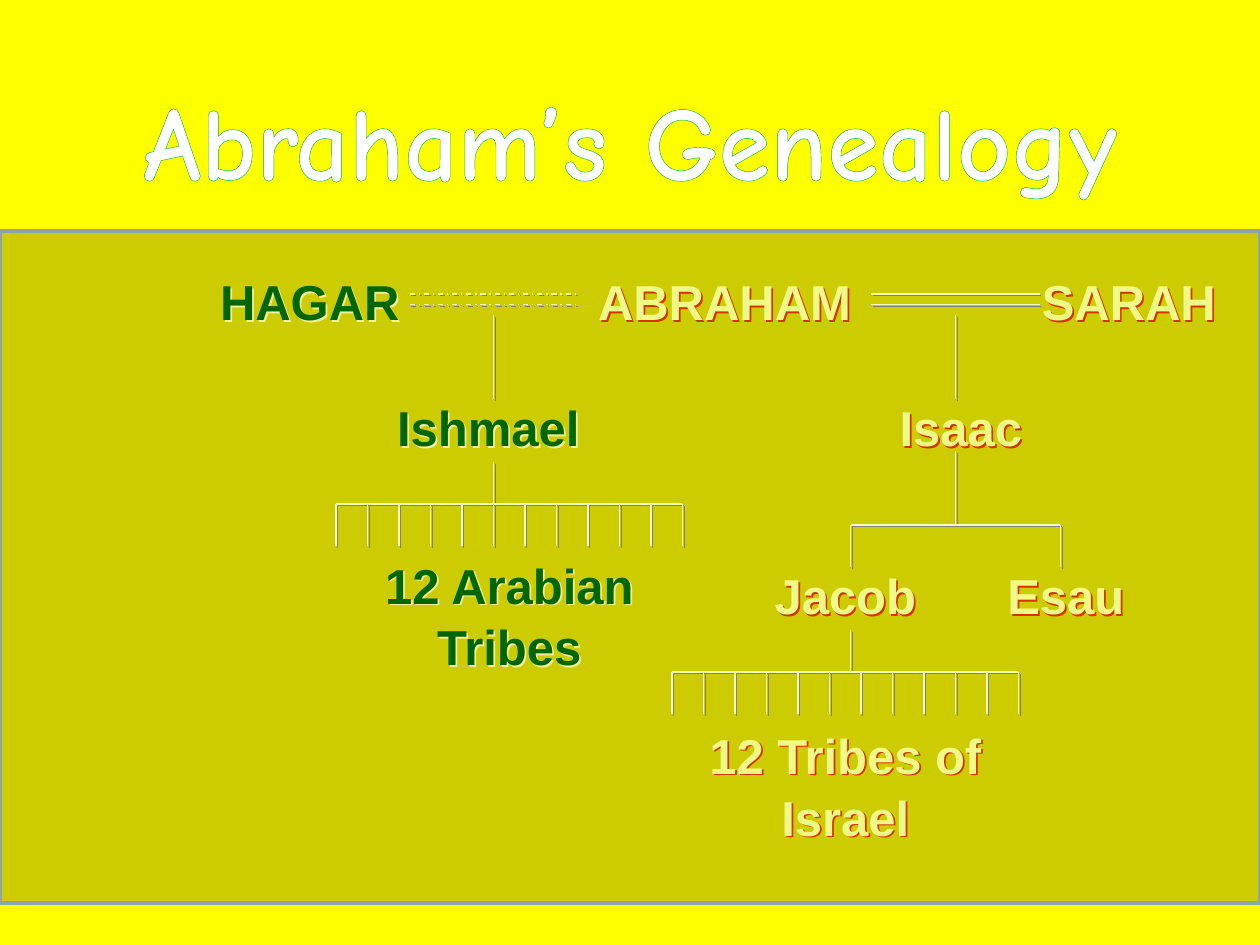
"""Builds a family-tree slide of Abraham's descendants on a twelfth-of-an-inch grid."""
from dataclasses import dataclass

import lxml.etree
import pptx
import pptx.dml.color
import pptx.enum.dml
import pptx.enum.shapes
import pptx.enum.text
import pptx.oxml
import pptx.oxml.ns
import pptx.util

COLUMNS, ROWS = 120, 90
WIDTH, HEIGHT = pptx.util.Inches(10), pptx.util.Inches(7.5)
NAMESPACE = pptx.oxml.ns.nsdecls("a")
ISRAEL = {"color": "EFFA88", "shadow": "D63300"}
ARABIA = {"color": "006600", "shadow": "F0F0A0"}


@dataclass(frozen=True)
class Person:
    """A name in the tree, placed by grid column and row."""
    name: str
    column: float
    row: float
    columns: float
    branch: dict


@dataclass(frozen=True)
class Link:
    """A straight line between two grid points."""
    start: tuple[float, float]
    end: tuple[float, float]
    dashed: bool = False


@dataclass(frozen=True)
class Comb:
    """A bar of descendants with evenly spaced teeth."""
    column: float
    row: float
    teeth: int
    gap: float


PEOPLE = [
    Person("HAGAR", 19, 25, 21, ARABIA),
    Person("ABRAHAM", 54, 25, 30, ISRAEL),
    Person("SARAH", 97, 25, 21, ISRAEL),
    Person("Ishmael", 36, 37, 21, ARABIA),
    Person("Isaac", 81, 37, 21, ISRAEL),
    Person("Jacob", 70, 53, 21, ISRAEL),
    Person("Esau", 91, 53, 21, ISRAEL),
    Person("12 Arabian Tribes", 29, 52, 39, ARABIA),
    Person("12 Tribes of Israel", 61, 68.2, 39, ISRAEL),
]
MARRIAGES = [
    Link((column, row), (column + 16, row), dashed)
    for column, dashed in ((83, False), (39, True))
    for row in (28, 29)
]
DESCENTS = [
    Link((91, 30), (91, 38)),
    Link((91, 43), (91, 50)),
    Link((81, 60), (81, 64)),
    Link((47, 30), (47, 38)),
    Link((47, 44), (47, 48)),
]
COMBS = [Comb(81, 50, 2, 20), Comb(64, 64, 12, 3), Comb(32, 48, 12, 3)]


def across(columns: float) -> int:
    """Turn grid columns into a length."""
    return round(WIDTH * columns / COLUMNS)


def down(rows: float) -> int:
    """Turn grid rows into a length."""
    return round(HEIGHT * rows / ROWS)


def rgb(value: str) -> pptx.dml.color.RGBColor:
    """Turn a hex string into a colour."""
    return pptx.dml.color.RGBColor.from_string(value)


def apply_format(target, values: dict) -> None:
    """Set each named attribute on the target."""
    for name, value in values.items():
        setattr(target, name, value)


def shadow_effect(color: str) -> lxml.etree._Element:
    """Return a hard shadow falling to the lower right."""
    return pptx.oxml.parse_xml(
        f'<a:effectLst {NAMESPACE}><a:outerShdw dist="17961" dir="2700000">'
        f'<a:srgbClr val="{color}"/></a:outerShdw></a:effectLst>')


def text_outline(color: str, points: float) -> lxml.etree._Element:
    """Return a solid outline for letters."""
    return pptx.oxml.parse_xml(
        f'<a:ln {NAMESPACE} w="{pptx.util.Pt(points)}"><a:solidFill>'
        f'<a:srgbClr val="{color}"/></a:solidFill></a:ln>')


def centre_paragraph(frame):
    """Prepare a wrapping frame and return its centred paragraph."""
    apply_format(frame, {
        "word_wrap": True,
        "auto_size": pptx.enum.text.MSO_AUTO_SIZE.SHAPE_TO_FIT_TEXT,
        "vertical_anchor": pptx.enum.text.MSO_ANCHOR.TOP,
    })
    paragraph = frame.paragraphs[0]
    apply_format(paragraph, {
        "alignment": pptx.enum.text.PP_ALIGN.CENTER, "line_spacing": 1.05})
    return paragraph


def add_run(paragraph, text: str, font: str, size: float, color: str):
    """Add a bold run and return it."""
    run = paragraph.add_run()
    run.text = text
    apply_format(run.font, {"name": font, "size": pptx.util.Pt(size), "bold": True})
    run.font.color.rgb = rgb(color)
    return run


def draw_title(slide) -> None:
    """Place the outlined heading in the title placeholder."""
    heading = slide.shapes.title
    apply_format(heading, {
        "left": 0, "top": down(6), "width": WIDTH, "height": down(13.3)})
    paragraph = centre_paragraph(heading.text_frame)
    for text, points in (("Abraham’s ", 0.75), ("Genealogy", 2.25)):
        run = add_run(paragraph, text, "Comic Neue", 60, "FFFFFF")
        properties = run.font._element
        properties.insert(0, text_outline("00B050", points))
        properties.insert(2, shadow_effect("000000"))


def draw_panel(slide) -> None:
    """Draw the olive panel behind the tree."""
    panel = slide.shapes.add_shape(
        pptx.enum.shapes.MSO_SHAPE.RECTANGLE, 0, down(22), WIDTH, down(64))
    panel.shadow.inherit = False
    panel.fill.solid()
    panel.fill.fore_color.rgb = rgb("CCCC00")
    panel.line.color.rgb = rgb("8AA6A8")
    panel.line.width = pptx.util.Pt(2)


def draw_person(slide, person: Person) -> None:
    """Write one name of the tree."""
    label = slide.shapes.add_textbox(
        across(person.column), down(person.row), across(person.columns), down(6.8))
    paragraph = centre_paragraph(label.text_frame)
    add_run(paragraph, person.name, "Arial", 28, person.branch["color"])
    label._element.spPr.append(shadow_effect(person.branch["shadow"]))


def draw_link(slide, link: Link) -> None:
    """Draw one shadowed line of the tree."""
    (left, top), (right, bottom) = link.start, link.end
    line = slide.shapes.add_connector(
        pptx.enum.shapes.MSO_CONNECTOR.STRAIGHT,
        across(left), down(top), across(right), down(bottom))
    line.line.color.rgb = rgb("F6FCC0")
    line.line.width = pptx.util.Pt(0.75)
    if link.dashed:
        line.line.dash_style = pptx.enum.dml.MSO_LINE.DASH_DOT
    line._element.spPr.append(shadow_effect("808080"))


def draw_comb(slide, comb: Comb) -> None:
    """Draw a bar and the teeth hanging from it."""
    columns = [comb.column - 0 + tooth * comb.gap for tooth in range(comb.teeth)]
    draw_link(slide, Link((columns[0], comb.row), (columns[-1], comb.row)))
    for column in columns:
        draw_link(slide, Link((column, comb.row), (column, comb.row + 4)))


def main() -> None:
    """Build and save the slide."""
    deck = pptx.Presentation()
    apply_format(deck, {"slide_width": WIDTH, "slide_height": HEIGHT})
    slide = deck.slides.add_slide(deck.slide_layouts.get_by_name("Title Only"))
    slide.background.fill.solid()
    slide.background.fill.fore_color.rgb = rgb("FFFF00")
    draw_panel(slide)
    draw_title(slide)
    for link in MARRIAGES + DESCENTS:
        draw_link(slide, link)
    for comb in COMBS:
        draw_comb(slide, comb)
    for person in PEOPLE:
        draw_person(slide, person)
    deck.save("out.pptx")


if __name__ == "__main__":
    main()
